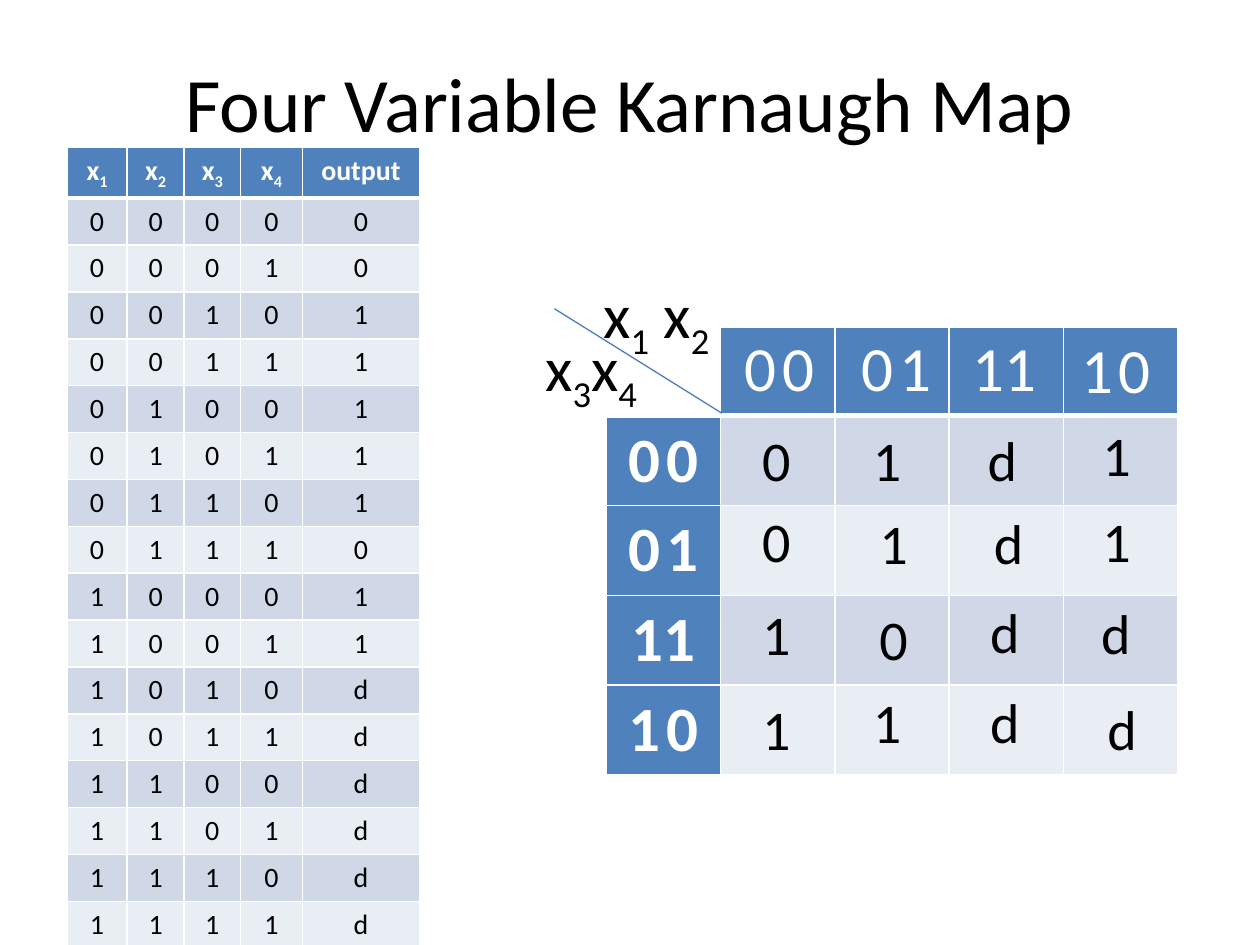
from itertools import product

from lxml.etree import SubElement
from pptx import Presentation
from pptx.dml.color import RGBColor
from pptx.enum.shapes import MSO_CONNECTOR
from pptx.enum.text import MSO_ANCHOR, MSO_AUTO_SIZE, PP_ALIGN
from pptx.oxml.ns import qn
from pptx.util import Inches, Pt

BLACK = RGBColor(0x00, 0x00, 0x00)
WHITE = RGBColor(0xFF, 0xFF, 0xFF)
HEADER = RGBColor(0x4F, 0x81, 0xBD)
BAND_DARK = RGBColor(0xD0, 0xD8, 0xE8)
BAND_LIGHT = RGBColor(0xE9, 0xED, 0xF4)
DIAGONAL = RGBColor(0x4B, 0x7E, 0xBC)
FONT = "Calibri"

OUTPUTS = "0011111011dddddd"
TRUTH = {"".join(bits): out for bits, out in zip(product("01", repeat=4), OUTPUTS)}
GRAY = ["00", "01", "11", "10"]


def style(p, size, color, bold=False, align=None):
    p.alignment = align
    font = p.font
    font.name, font.size, font.bold = FONT, Pt(size), bold
    font.color.rgb = color


def add_variables(p, text):
    """Write text with each digit as a subscript."""
    for char in text:
        r = p.add_run()
        r.text = char
        if char.isdigit():
            r.font._element.set("baseline", "-25000")


def add_code(p, code):
    """Write a two-bit code; a small space parts its digits, except in 11."""
    for part in [code] if code == "11" else [code[0], " ", code[1]]:
        r = p.add_run()
        r.text = part
        if part == " ":
            r.font.size = Pt(14)


def format_cell(cell, fill, bottom=1):
    tc_pr = cell._tc.get_or_add_tcPr()
    for side, width in (("L", 1), ("R", 1), ("T", 1), ("B", bottom)):
        ln = SubElement(tc_pr, qn("a:ln" + side), w=str(Pt(width)))
        SubElement(SubElement(ln, qn("a:solidFill")), qn("a:srgbClr"), val=str(WHITE))
    cell.fill.solid()
    cell.fill.fore_color.rgb = fill


def band(row):
    return BAND_DARK if row % 2 else BAND_LIGHT


def add_text(s, left, top, width, height):
    tf = s.shapes.add_textbox(Inches(left), Inches(top), Inches(width), Inches(height)).text_frame
    tf.word_wrap = True
    tf.auto_size = MSO_AUTO_SIZE.SHAPE_TO_FIT_TEXT
    return tf


def add_title(s, left, top, width, height):
    title = s.shapes.title
    title.left, title.top = Inches(left), Inches(top)
    title.width, title.height = Inches(width), Inches(height)
    tf = title.text_frame
    tf.text = "Four Variable Karnaugh Map"
    tf.vertical_anchor = MSO_ANCHOR.MIDDLE
    style(tf.paragraphs[0], 44, BLACK, align=PP_ALIGN.CENTER)


def add_truth_table(s, left, top, width, height):
    rows = [["x1", "x2", "x3", "x4", "output"]] + [[*bits, out] for bits, out in TRUTH.items()]
    table = s.shapes.add_table(len(rows), 5, Inches(left), Inches(top),
                               Inches(width), Inches(height)).table
    for col, col_width in zip(table.columns, (0.48, 0.45, 0.45, 0.49, 0.93)):
        col.width = Inches(col_width)
    for i, values in enumerate(rows):
        for j, value in enumerate(values):
            cell = table.cell(i, j)
            p = cell.text_frame.paragraphs[0]
            if value.startswith("x"):
                add_variables(p, value)
            else:
                p.text = value
            is_header = i == 0
            style(p, 16, WHITE if is_header else BLACK, is_header, PP_ALIGN.CENTER)
            format_cell(cell, HEADER if is_header else band(i), 3 if is_header else 1)


def add_map_grid(s, left, top, width, height):
    table = s.shapes.add_table(5, 5, Inches(left), Inches(top),
                               Inches(width), Inches(height)).table
    table.first_col = True
    for i, j in product(range(5), repeat=2):
        cell = table.cell(i, j)
        if i == j == 0:
            fill = WHITE
        else:
            fill = HEADER if i == 0 or j == 0 else band(i)
        format_cell(cell, fill, 1 if i else 3)
        if i and j == 0:
            cell.vertical_anchor = MSO_ANCHOR.MIDDLE
            p = cell.text_frame.paragraphs[0]
            add_code(p, GRAY[i - 1])
            style(p, 36, WHITE, True, PP_ALIGN.CENTER)


def add_map_corner(s, left, top, width, height):
    # Diagonal between the two variable pairs
    line = s.shapes.add_connector(MSO_CONNECTOR.STRAIGHT, Inches(left + width),
                                  Inches(top + height), Inches(left), Inches(top))
    line.line.color.rgb = DIAGONAL
    line.line.width = Pt(0.75)
    SubElement(line._element.spPr, qn("a:effectLst"))
    # Variable names
    for text, dx, dy, box_width, indent in (("x1 x2", 0.06, -0.31, 1.33, 0.23),
                                            ("x3x4", -0.17, 0.11, 1.19, 0)):
        tf = add_text(s, left + dx, top + dy, box_width, 0.71)
        tf.margin_left = Inches(0.1 + indent)
        add_variables(tf.paragraphs[0], text)
        style(tf.paragraphs[0], 36, BLACK)


def add_map_labels(s, left, top):
    # Column codes
    for code, dx, dy in zip(GRAY, (0, 0.93, 1.79, 2.67), (0, 0, 0, 0.01)):
        p = add_text(s, left + dx, top + dy, 0.91, 0.71).paragraphs[0]
        add_code(p, code)
        style(p, 36, WHITE, align=PP_ALIGN.CENTER)


def add_map_values(s, left, top):
    # Offsets of the values, one line per row of the map
    offsets = [
        [(0, 0.04), (0.88, 0.04), (1.79, 0.04), (2.7, 0)],
        [(0, 0.68), (0.93, 0.7), (1.84, 0.7), (2.7, 0.68)],
        [(0, 1.42), (0.93, 1.46), (1.81, 1.4), (2.69, 1.41)],
        [(0, 2.17), (0.88, 2.12), (1.81, 2.12), (2.74, 2.17)],
    ]
    for x3x4, row in zip(GRAY, offsets):
        for x1x2, (dx, dy) in zip(GRAY, row):
            p = add_text(s, left + dx, top + dy, 0.48, 0.64).paragraphs[0]
            p.text = TRUTH[x1x2 + x3x4]
            style(p, 32, BLACK)


def main():
    prs = Presentation()
    prs.slide_width, prs.slide_height = Inches(10), Inches(7.5)
    s = prs.slides.add_slide(prs.slide_layouts[5])
    add_title(s, 0.5, 0.3, 9, 1.02)
    add_truth_table(s, 0.53, 1.17, 2.8, 6.23)
    add_map_grid(s, 4.81, 2.6, 4.54, 3.5)
    add_map_corner(s, 4.4, 2.45, 1.33, 0.83)
    add_map_labels(s, 5.73, 2.56)
    add_map_values(s, 5.95, 3.29)
    prs.save("out.pptx")


if __name__ == "__main__":
    main()
